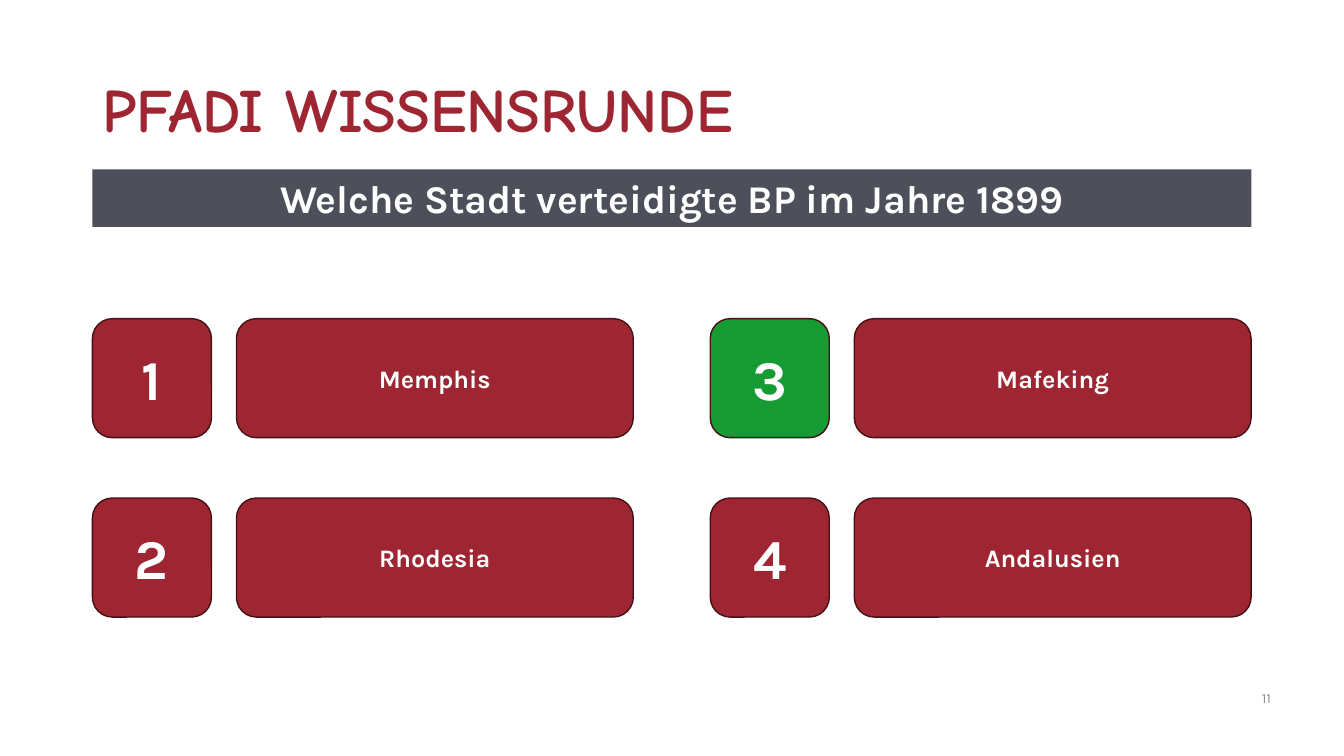
from dataclasses import dataclass

from pptx import Presentation
from pptx.dml.color import RGBColor
from pptx.enum.shapes import MSO_SHAPE as Shape
from pptx.enum.text import MSO_ANCHOR as Anchor, PP_ALIGN as Align
from pptx.util import Cm, Pt


@dataclass(frozen=True)
class Theme:
    red: RGBColor = RGBColor(0x9D, 0x26, 0x32)
    dark_red: RGBColor = RGBColor(0x45, 0x11, 0x16)
    green: RGBColor = RGBColor(0x15, 0x9A, 0x34)
    slate: RGBColor = RGBColor(0x4D, 0x4F, 0x5A)
    gray: RGBColor = RGBColor(0x8C, 0x8C, 0x8C)
    white: RGBColor = RGBColor(0xFF, 0xFF, 0xFF)
    title_font: str = "Comic Neue"
    body_font: str = "Karla"
    title_size: Pt = Pt(44)
    number_size: Pt = Pt(40)
    question_size: Pt = Pt(28)
    answer_size: Pt = Pt(18)
    page_size: Pt = Pt(10)


THEME = Theme()

MARGIN = Cm(2.33)
CONTENT_WIDTH = Cm(29.21)
GRID_TOP = Cm(8.03)
COLUMN_PITCH = Cm(15.57)
ROW_PITCH = Cm(4.52)
TILE_HEIGHT = Cm(3)
ANSWER_OFFSET = Cm(3.63)
ANSWER_WIDTH = Cm(10)
ROWS = 2

ANSWERS = ["Memphis", "Rhodesia", "Mafeking", "Andalusien"]
CORRECT_NUMBER = 3


def write(shape, text, size, color=THEME.white, font=THEME.body_font,
          bold=True, align=Align.CENTER, anchor=Anchor.MIDDLE):
    frame = shape.text_frame
    frame.word_wrap = True
    frame.vertical_anchor = anchor
    paragraph = frame.paragraphs[0]
    paragraph.text = text
    paragraph.alignment = align
    paragraph.font.name = font
    paragraph.font.size = size
    paragraph.font.bold = bold
    paragraph.font.color.rgb = color
    return paragraph


def add_box(slide, kind, left, top, width, height, fill):
    shape = slide.shapes.add_shape(kind, left, top, width, height)
    shape.shadow.inherit = False
    shape.fill.solid()
    shape.fill.fore_color.rgb = fill
    shape.line.fill.background()
    return shape


def add_title(slide, text):
    box = slide.shapes.add_textbox(MARGIN, Cm(0.99), CONTENT_WIDTH, Cm(3.68))
    paragraph = write(box, text, THEME.title_size, THEME.red,
                      THEME.title_font, align=Align.LEFT)
    paragraph.line_spacing = 0.9


def add_question(slide, text):
    band = add_box(slide, Shape.RECTANGLE, MARGIN, Cm(4.27),
                   CONTENT_WIDTH, Cm(1.45), THEME.slate)
    write(band, text, THEME.question_size, anchor=Anchor.TOP)


def add_tile(slide, left, top, width, text, size, fill):
    tile = add_box(slide, Shape.ROUNDED_RECTANGLE, left, top, width,
                   TILE_HEIGHT, fill)
    tile.line.color.rgb = THEME.dark_red
    tile.line.width = Pt(1)
    write(tile, text, size)


def add_answer(slide, number, text):
    """Place a number tile and its answer, filling the grid by column."""
    column, row = divmod(number - 1, ROWS)
    left = MARGIN + column * COLUMN_PITCH
    top = GRID_TOP + row * ROW_PITCH
    number_fill = THEME.green if number == CORRECT_NUMBER else THEME.red
    add_tile(slide, left, top, TILE_HEIGHT, str(number),
             THEME.number_size, number_fill)
    add_tile(slide, left + ANSWER_OFFSET, top, ANSWER_WIDTH, text,
             THEME.answer_size, THEME.red)


def add_page_number(slide, text):
    box = slide.shapes.add_textbox(Cm(31.55), Cm(17.07), Cm(2.33), Cm(1.02))
    write(box, text, THEME.page_size, THEME.gray, bold=False, align=Align.LEFT)


def main():
    presentation = Presentation()
    presentation.slide_width = Cm(33.87)
    presentation.slide_height = Cm(19.05)
    slide = presentation.slides.add_slide(presentation.slide_layouts[6])
    add_title(slide, "PFADI WISSENSRUNDE")
    add_page_number(slide, "11")
    add_question(slide, "Welche Stadt verteidigte BP im Jahre 1899")
    for number, answer in enumerate(ANSWERS, start=1):
        add_answer(slide, number, answer)
    presentation.save("out.pptx")


if __name__ == "__main__":
    main()
